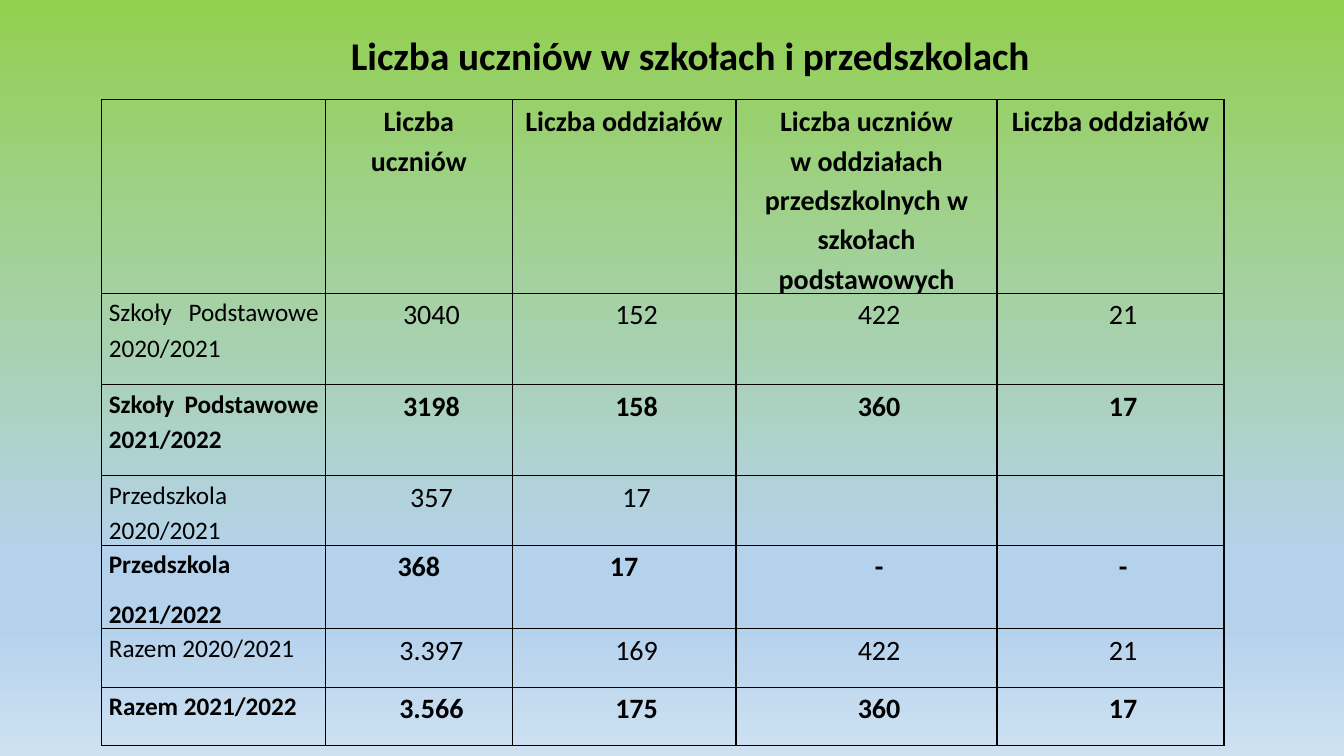
from dataclasses import dataclass

from lxml.etree import SubElement
from pptx import Presentation
from pptx.dml.color import RGBColor
from pptx.enum.text import MSO_ANCHOR, MSO_AUTO_SIZE, PP_ALIGN
from pptx.oxml.ns import qn
from pptx.util import Inches, Pt


@dataclass(frozen=True)
class Theme:
    font: str = "Calibri"
    ink: str = "000000"
    title_size: int = 28
    figure_size: int = 20
    label_size: int = 18
    border_width: float = 1
    backdrop: tuple = ((0, "92D050"), (74, "B5D2EC"), (83, "B5D2EC"), (100, "CEE1F2"))


@dataclass(frozen=True)
class SchoolRow:
    label: str
    figures: tuple
    height: float
    flush_columns: tuple = ()

    @property
    def is_current_year(self):
        return self.label.endswith("2021/2022")


THEME = Theme()
TITLE = "Liczba uczniów w szkołach i przedszkolach"
COLUMN_WIDTHS = (2.22, 1.85, 2.22, 2.59, 2.25)
HEADER_HEIGHT = 1.44
HEADINGS = (
    "",
    "Liczba uczniów",
    "Liczba oddziałów",
    "Liczba uczniów\vw oddziałach przedszkolnych w szkołach podstawowych",
    "Liczba oddziałów",
)
SCHOOL_ROWS = (
    SchoolRow("Szkoły Podstawowe 2020/2021", ("3040", "152", "422", "21"), 0.91),
    SchoolRow("Szkoły Podstawowe 2021/2022", ("3198", "158", "360", "17"), 0.9),
    SchoolRow("Przedszkola 2020/2021", ("357", "17", "", ""), 0.58),
    SchoolRow("Przedszkola\n2021/2022", ("368", "17", "-", "-"), 0.77, (1, 2)),
    SchoolRow("Razem 2020/2021", ("3.397", "169", "422", "21"), 0.58),
    SchoolRow("Razem 2021/2022", ("3.566", "175", "360", "17"), 0.58),
)


def write_text(frame, text, size, bold=False, align=PP_ALIGN.CENTER,
               line_spacing=None, space_after=None, indent=0):
    """Fill a text frame; a newline starts a paragraph, a vertical tab a line."""
    frame.text = text
    for paragraph in frame.paragraphs:
        paragraph.alignment = align
        paragraph.line_spacing = line_spacing
        paragraph.space_after = space_after
        if indent:
            properties = paragraph._p.get_or_add_pPr()
            properties.set("marL", str(Inches(indent)))
            properties.set("indent", "0")
        for run in paragraph.runs:
            run.font.name = THEME.font
            run.font.size = Pt(size)
            run.font.bold = bold
            run.font.color.rgb = RGBColor.from_string(THEME.ink)


def paint_backdrop(slide):
    fill = slide.background.fill
    fill.gradient()
    fill.gradient_angle = 270
    stops = slide._element.find(".//" + qn("a:gsLst"))
    stops.clear()
    for percent, colour in THEME.backdrop:
        stop = SubElement(stops, qn("a:gs"), pos=str(percent * 1000))
        SubElement(stop, qn("a:srgbClr"), val=colour)


def add_title(slide):
    title = slide.shapes.title
    title.left, title.top = Inches(3.38), Inches(0.26)
    title.width, title.height = Inches(7.01), Inches(0.57)
    frame = title.text_frame
    write_text(frame, TITLE, THEME.title_size, bold=True, align=PP_ALIGN.LEFT)
    frame.vertical_anchor = MSO_ANCHOR.TOP
    frame.word_wrap = False
    frame.auto_size = MSO_AUTO_SIZE.SHAPE_TO_FIT_TEXT


def style_cell(cell):
    """Give a cell its borders, margins and a clear fill."""
    cell.margin_left = cell.margin_right = Inches(0.07)
    cell.margin_top = cell.margin_bottom = 0
    properties = cell._tc.get_or_add_tcPr()
    for side in ("lnL", "lnR", "lnT", "lnB"):
        border = SubElement(properties, qn(f"a:{side}"), w=str(Pt(THEME.border_width)))
        colour = SubElement(border, qn("a:solidFill"))
        SubElement(colour, qn("a:srgbClr"), val=THEME.ink)
    cell.fill.background()


def write_cell(cell, text, size, **text_format):
    style_cell(cell)
    if text:
        write_text(cell.text_frame, text, size, line_spacing=1.15,
                   space_after=Pt(10), **text_format)


def add_school_table(slide):
    table_frame = slide.shapes.add_table(
        len(SCHOOL_ROWS) + 1, len(COLUMN_WIDTHS),
        Inches(1.01), Inches(0.99), Inches(11.14), Inches(6.39))
    table = table_frame.table
    table.first_row = table.horz_banding = False
    for column, width in zip(table.columns, COLUMN_WIDTHS):
        column.width = Inches(width)
    heights = [HEADER_HEIGHT] + [school.height for school in SCHOOL_ROWS]
    for row, height in zip(table.rows, heights):
        row.height = Inches(height)
    table_frame.height = Inches(6.39)

    for column, heading in enumerate(HEADINGS):
        write_cell(table.cell(0, column), heading, THEME.figure_size, bold=True)
    for row, school in enumerate(SCHOOL_ROWS, start=1):
        bold = school.is_current_year
        write_cell(table.cell(row, 0), school.label, THEME.label_size,
                   bold=bold, align=PP_ALIGN.JUSTIFY)
        for column, figure in enumerate(school.figures, start=1):
            indent = 0 if column in school.flush_columns else 0.25
            write_cell(table.cell(row, column), figure, THEME.figure_size,
                       bold=bold, indent=indent)


def main():
    presentation = Presentation()
    presentation.slide_width = Inches(13.33)
    presentation.slide_height = Inches(7.5)
    slide = presentation.slides.add_slide(presentation.slide_layouts.get_by_name("Title Only"))
    paint_backdrop(slide)
    add_title(slide)
    add_school_table(slide)
    presentation.save("out.pptx")


if __name__ == "__main__":
    main()
